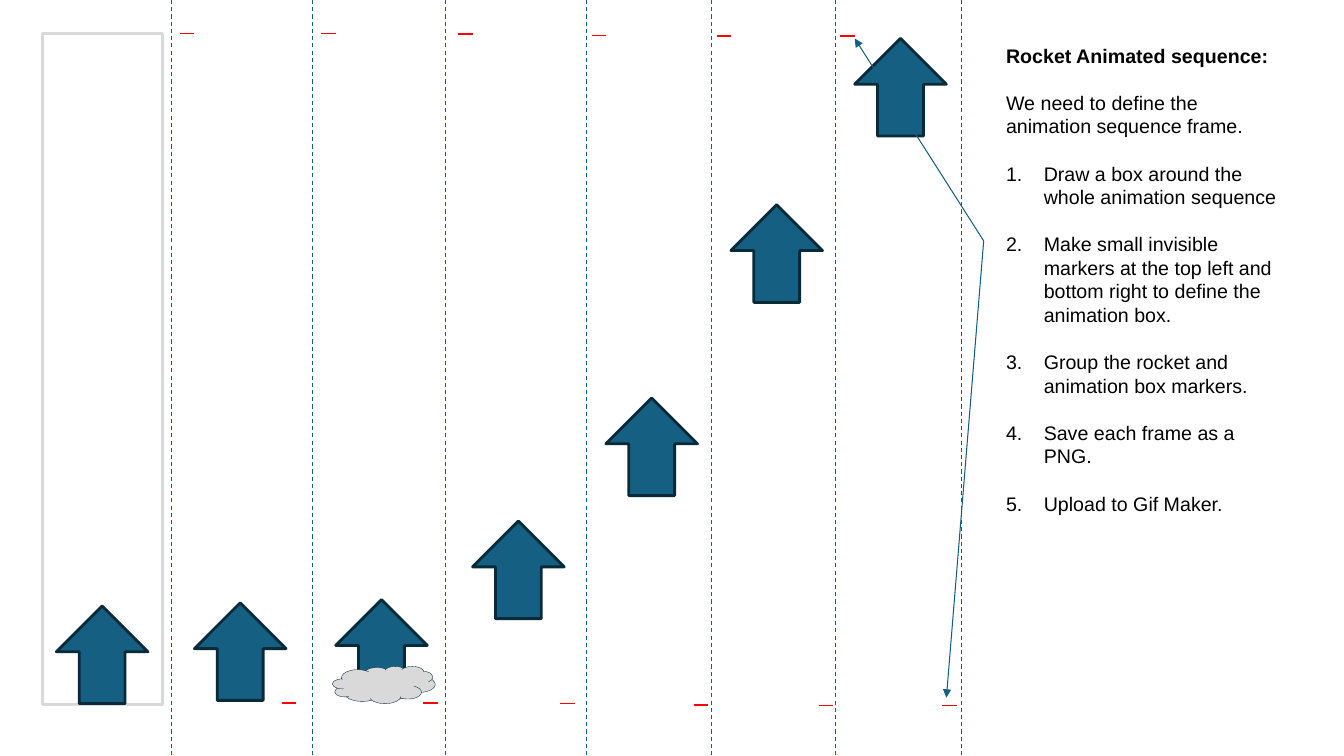
from lxml import etree
from pptx import Presentation
from pptx import util as u
from pptx.dml.color import RGBColor
from pptx.enum import dml, shapes, text
from pptx.oxml.ns import qn

BLUE = RGBColor(0x15, 0x60, 0x82)
LINE_BLUE = RGBColor(0x12, 0x5F, 0x82)
NAVY = RGBColor(0x09, 0x2A, 0x39)
GREY = RGBColor(0xD9, 0xD9, 0xD9)
RED = RGBColor(0xFF, 0x00, 0x00)
BLACK = RGBColor(0x00, 0x00, 0x00)

ROCKET_SIZE = (2.31, 2.46)
ROCKETS = [(1.42, 15.27), (4.9, 15.19), (8.46, 15.11), (11.91, 13.13),
           (15.27, 10.03), (18.42, 5.16), (21.54, 0.97)]
MARKER_TOPS = [0.84, 0.84, 0.86, 0.89, 0.91, 0.91]
MARKER_LENGTH = 0.36
MARKER_DROP = 16.87
RIGHT_MARKER_OFFSET = 2.21
DIVIDERS = [4.32, 7.87, 11.23, 14.78, 17.93, 21.06, 24.23]
PAGE_WIDTH, PAGE_HEIGHT = 33.87, 19.05
POINTER_START = (24.79, 6.07)
POINTER_ENDS = [(21.54, 0.97), (23.85, 17.58)]

HEADING = "Rocket Animated sequence:"
INTRO = "We need to define the animation sequence frame."
STEPS = [
    "Draw a box around the whole animation sequence",
    "Make small invisible markers at the top left and bottom right "
    "to define the animation box.",
    "Group the rocket and animation box markers.",
    "Save each frame as a PNG.",
    "Upload to Gif Maker.",
]


def add_figure(page, kind, left, top, width, height, fill, line, weight):
    figure = page.shapes.add_shape(
        kind, u.Cm(left), u.Cm(top), u.Cm(width), u.Cm(height))
    figure.shadow.inherit = False
    if fill is None:
        figure.fill.background()
    else:
        figure.fill.solid()
        figure.fill.fore_color.rgb = fill
    figure.line.color.rgb = line
    figure.line.width = u.Pt(weight)


def add_line(page, start, end, color, weight, dashed=False, arrow=False):
    line = page.shapes.add_connector(
        shapes.MSO_CONNECTOR.STRAIGHT, *map(u.Cm, start + end))
    line.line.color.rgb = color
    line.line.width = u.Pt(weight)
    if dashed:
        line.line.dash_style = dml.MSO_LINE.DASH
    if arrow:
        outline = line.line._get_or_add_ln()
        etree.SubElement(outline, qn("a:tailEnd"), type="triangle")
    etree.SubElement(line._element.spPr, qn("a:effectLst"))


def add_markers(page, rocket_left, top):
    corners = [(rocket_left - MARKER_LENGTH, top),
               (rocket_left + RIGHT_MARKER_OFFSET, top + MARKER_DROP)]
    for left, height in corners:
        add_line(page, (left, height), (left + MARKER_LENGTH, height), RED, 1)


def place_text(box, top, height):
    box.left, box.top = u.Cm(25.1), u.Cm(top)
    box.width, box.height = u.Cm(7.47), u.Cm(height)
    frame = box.text_frame
    frame.word_wrap = True
    frame.auto_size = text.MSO_AUTO_SIZE.NONE
    frame.vertical_anchor = text.MSO_ANCHOR.TOP
    return frame


def format_para(para, words, bold=False, numbered=False):
    para.text = words
    para.alignment = text.PP_ALIGN.LEFT
    para.line_spacing = u.Pt(16.85)
    para.space_before = u.Pt(0)
    para.space_after = u.Pt(16.85)
    properties = para._p.get_or_add_pPr()
    indent = u.Cm(0.95) if numbered else 0
    properties.set("marL", str(indent))
    properties.set("indent", str(-indent))
    if numbered:
        etree.SubElement(properties, qn("a:buFont"), typeface="+mj-lt")
        etree.SubElement(properties, qn("a:buAutoNum"), type="arabicPeriod")
    else:
        etree.SubElement(properties, qn("a:buNone"))
    para.font.name = "Arial"
    para.font.size = u.Pt(14)
    para.font.bold = bold
    para.font.color.rgb = BLACK


def add_instructions(page):
    title, body = page.placeholders
    heading = place_text(title, 0.97, 0.9)
    format_para(heading.paragraphs[0], HEADING, bold=True)
    frame = place_text(body, 2.16, 11.02)
    format_para(frame.paragraphs[0], INTRO)
    for step in STEPS:
        format_para(frame.add_paragraph(), step, numbered=True)


def main():
    """Build the rocket animation slide and save it."""
    deck = Presentation()
    deck.slide_width, deck.slide_height = u.Cm(PAGE_WIDTH), u.Cm(PAGE_HEIGHT)
    page = deck.slides.add_slide(deck.slide_layouts[1])
    kinds = shapes.MSO_SHAPE
    add_instructions(page)
    add_figure(page, kinds.RECTANGLE, 1.07, 0.84, 3.02, 16.92, None, GREY, 2)
    for left, top in ROCKETS:
        add_figure(page, kinds.UP_ARROW, left, top, *ROCKET_SIZE, BLUE, NAVY, 2)
    for (left, _), top in zip(ROCKETS[1:], MARKER_TOPS):
        add_markers(page, left, top)
    add_figure(page, kinds.CLOUD, 8.38, 16.79, 2.59, 0.94, GREY, NAVY, 0.25)
    for left in DIVIDERS:
        add_line(page, (left, 0), (left, PAGE_HEIGHT), LINE_BLUE, 0.75, dashed=True)
    for end in POINTER_ENDS:
        add_line(page, POINTER_START, end, LINE_BLUE, 0.75, arrow=True)
    deck.save("out.pptx")


if __name__ == "__main__":
    main()
